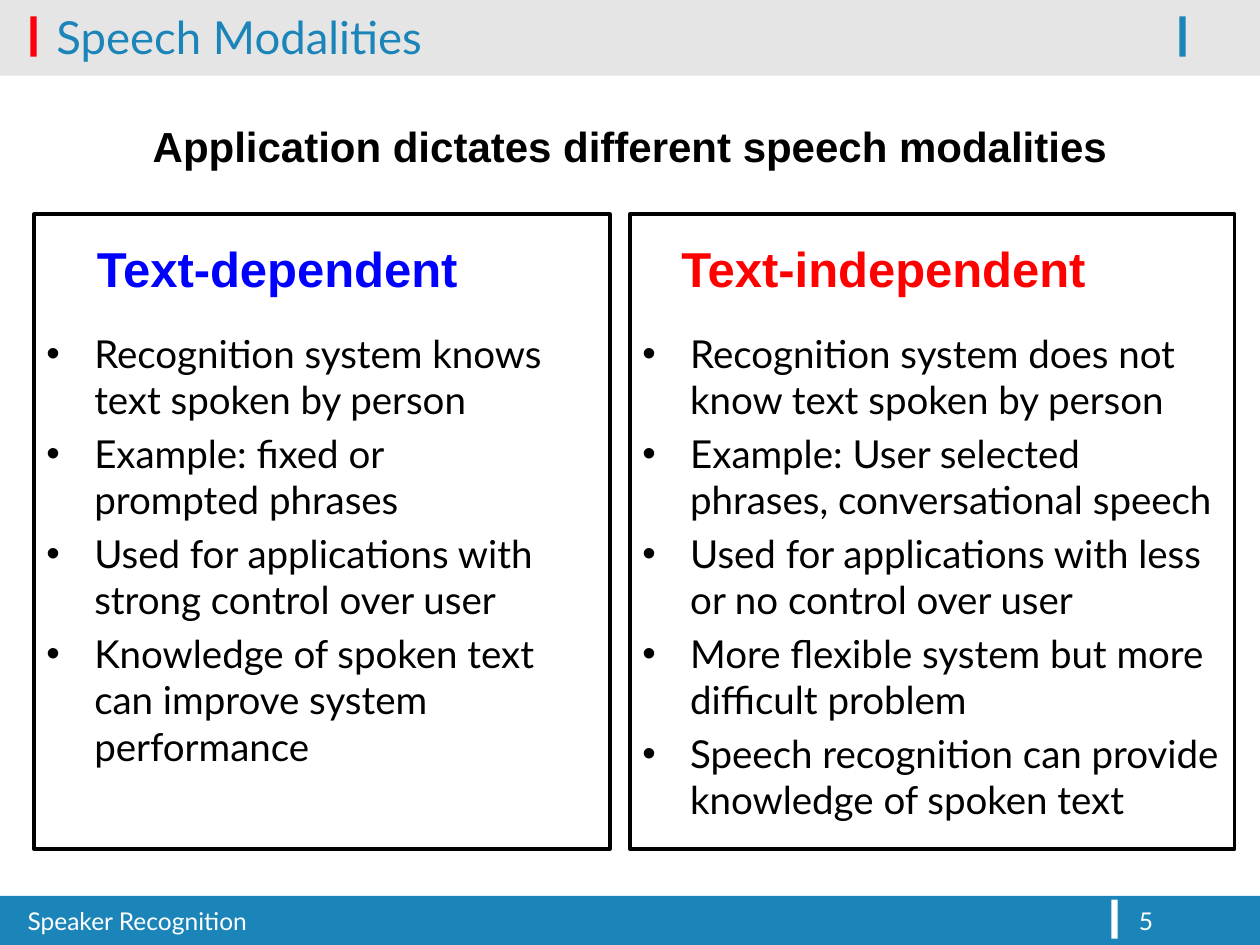
"""Build the Speech Modalities slide: a headline above two bulleted panels."""
from lxml.etree import SubElement
from pptx import Presentation
from pptx.dml.color import RGBColor
from pptx.enum.shapes import MSO_SHAPE as Preset
from pptx.enum.text import MSO_ANCHOR as Anchor, PP_ALIGN as Align
from pptx.oxml.ns import qn
from pptx.util import Inches, Pt

BLUE, RED, WHITE, BLACK = "1B85B9", "FE000C", "FFFFFF", "000000"
HANG = 0.38
PANEL_TOP, PANEL_HEIGHT = 1.7, 5.04
BULLETS_TOP, BULLETS_HEIGHT = 2.57, 4.17

BANDS = [
    ((0, 0.56, 10, 0.04), BLACK, 10),
    ((0, 7.11, 10, 0.39), BLUE, 100),
    ((0, 0, 10, 0.56), BLACK, 10),
    ((0.24, 0.13, 0.05, 0.32), RED, 100),
    ((9.36, 0.13, 0.05, 0.32), BLUE, 100),
    ((8.82, 7.14, 0.05, 0.31), WHITE, 100),
]

LABELS = [
    ("Speaker Recognition", (0.12, 7.14, 8.58, 0.36), dict(size=14, color=WHITE)),
    ("5", (8.94, 7.14, 0.9, 0.36), dict(size=14, color=WHITE)),
    ("Speech Modalities", (0.35, -0.11, 8.9, 0.79),
     dict(size=26, color=BLUE, anchor=Anchor.MIDDLE)),
    ("Application dictates different speech modalities", (0.25, 0.91, 9.5, 0.5),
     dict(size=24, font="Arial", bold=True, align=Align.CENTER)),
]

PANELS = [
    dict(
        heading="Text-dependent", color="0000FF", heading_left=0.67,
        left=0.27, width=4.57, bullets_width=4.25,
        bullets=[
            "Recognition system knows text spoken by person",
            "Example: fixed or prompted phrases",
            "Used for applications with strong control over user",
            "Knowledge of spoken text can improve system performance",
        ],
    ),
    dict(
        heading="Text-independent", color="FF0000", heading_left=5.31,
        left=5, width=4.8, bullets_width=4.8,
        bullets=[
            "Recognition system does not know text spoken by person",
            "Example: User selected phrases, conversational speech",
            "Used for applications with less or no control over user",
            "More flexible system but more difficult problem",
            "Speech recognition can provide knowledge of spoken text",
        ],
    ),
]


def rgb(value):
    """Turn a hex string into a colour."""
    return RGBColor.from_string(value)


def add_rect(slide, box, fill, opacity=100, outline=None):
    """Add a flat rectangle, optionally see-through or outlined."""
    rect = slide.shapes.add_shape(Preset.RECTANGLE, *map(Inches, box))
    rect.shadow.inherit = False
    rect.fill.solid()
    rect.fill.fore_color.rgb = rgb(fill)
    if opacity < 100:
        tint = rect.fill._xPr.find(qn("a:solidFill"))[0]
        SubElement(tint, qn("a:alpha"), val=str(opacity * 1000))
    if outline:
        rect.line.color.rgb = rgb(outline)
        rect.line.width = Pt(2)
    else:
        rect.line.fill.background()


def add_text(slide, lines, box, size, color=BLACK, font="Lato", bold=False,
             align=Align.LEFT, anchor=Anchor.TOP, bulleted=False):
    """Add a wrapped text box with one paragraph per line."""
    frame = slide.shapes.add_textbox(*map(Inches, box)).text_frame
    frame.word_wrap = True
    frame.vertical_anchor = anchor
    for index, line in enumerate(lines):
        paragraph = frame.paragraphs[0] if index == 0 else frame.add_paragraph()
        paragraph.alignment = align
        if bulleted:
            paragraph.space_before = Pt(size * 0.2)
            properties = paragraph._p.get_or_add_pPr()
            properties.set("marL", str(Inches(HANG)))
            properties.set("indent", str(-Inches(HANG)))
            SubElement(properties, qn("a:buFont"), typeface="Arial")
            SubElement(properties, qn("a:buChar"), char="•")
        run = paragraph.add_run()
        run.text = line
        run.font.size = Pt(size)
        run.font.name = font
        run.font.bold = bold
        run.font.color.rgb = rgb(color)


def add_panel(slide, panel):
    """Add a framed panel with its heading and bullets."""
    left = panel["left"]
    add_rect(slide, (left, PANEL_TOP, panel["width"], PANEL_HEIGHT), WHITE, outline=BLACK)
    add_text(slide, panel["bullets"],
             (left, BULLETS_TOP, panel["bullets_width"], BULLETS_HEIGHT),
             size=22, bulleted=True)
    add_text(slide, [panel["heading"]], (panel["heading_left"], 1.84, 3.47, 0.57),
             size=28, color=panel["color"], font="Arial", bold=True)


def main():
    """Assemble and save the slide."""
    deck = Presentation()
    deck.slide_width, deck.slide_height = Inches(10), Inches(7.5)
    slide = deck.slides.add_slide(deck.slide_layouts[6])
    for box, fill, opacity in BANDS:
        add_rect(slide, box, fill, opacity)
    for text, box, style in LABELS:
        add_text(slide, [text], box, **style)
    for panel in PANELS:
        add_panel(slide, panel)
    deck.save("out.pptx")


if __name__ == "__main__":
    main()
